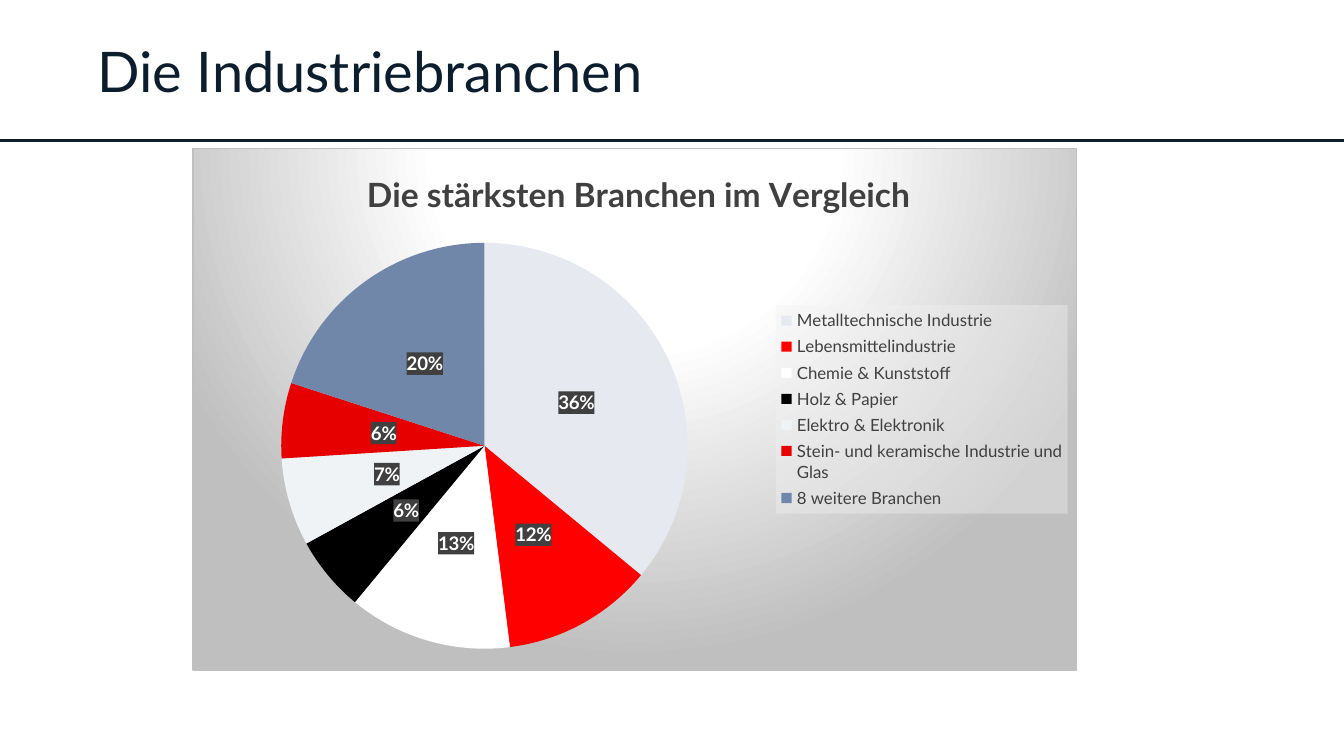
from dataclasses import dataclass

from lxml import etree
from pptx import Presentation
from pptx.chart.data import CategoryChartData
from pptx.dml.color import RGBColor
from pptx.enum.chart import XL_CHART_TYPE, XL_LABEL_POSITION, XL_LEGEND_POSITION
from pptx.enum.shapes import MSO_CONNECTOR
from pptx.enum.text import MSO_ANCHOR, PP_ALIGN
from pptx.oxml import parse_xml
from pptx.oxml.ns import nsdecls, qn
from pptx.util import Pt

PIE = XL_CHART_TYPE.PIE
CENTER = XL_LABEL_POSITION.CENTER
RIGHT = XL_LEGEND_POSITION.RIGHT
STRAIGHT = MSO_CONNECTOR.STRAIGHT
BOTTOM = MSO_ANCHOR.BOTTOM
LEFT = PP_ALIGN.LEFT

HEAD = "Die Industriebranchen"
NAME = "Die stärksten Branchen im Vergleich"
PARTS = [
    ("Metalltechnische Industrie", 36, "E6EAF0"),
    ("Lebensmittelindustrie", 12, "FF0000"),
    ("Chemie & Kunststoff", 13, "FFFFFF"),
    ("Holz & Papier", 6, "000000"),
    ("Elektro & Elektronik", 7, "F0F3F6"),
    ("Stein- und keramische Industrie und Glas", 6, "E70000"),
    ("8 weitere Branchen", 20, "7187A9"),
]
WIDE, HIGH = 720, 405
RULE = 75.2


@dataclass(frozen=True)
class Theme:
    face: str = "Lato"
    navy: str = "0C1D2E"
    black: str = "000000"
    dark: str = "404040"
    white: str = "FFFFFF"
    pale: str = "F2F2F2"
    gray: str = "BFBFBF"
    head: float = 30
    name: float = 18
    label: float = 10
    key: float = 9


THEME = Theme()


def style(font, size, color, bold=False):
    font.name, font.size, font.bold = THEME.face, Pt(size), bold
    font.color.rgb = RGBColor.from_string(color)


def box(fill, line="<a:ln><a:noFill/></a:ln>"):
    return parse_xml(f'<c:spPr {nsdecls("c", "a")}>{fill}{line}</c:spPr>')


def solid(color, alpha=100):
    return (f'<a:solidFill><a:srgbClr val="{color}">'
            f'<a:alpha val="{alpha * 1000}"/></a:srgbClr></a:solidFill>')


def place(node, after, **spots):
    """Give a chart part a manual layout, as shares of the chart's size."""
    for old in node.findall(qn("c:layout")):
        node.remove(old)
    layout = etree.Element(qn("c:layout"))
    manual = etree.SubElement(layout, qn("c:manualLayout"))
    if "plotArea" in node.tag:
        etree.SubElement(manual, qn("c:layoutTarget")).set("val", "inner")
    for axis in "xy":
        etree.SubElement(manual, qn(f"c:{axis}Mode")).set("val", "edge")
    for key, value in spots.items():
        etree.SubElement(manual, qn(f"c:{key}")).set("val", str(value))
    if after is None:
        node.insert(0, layout)
    else:
        node.find(qn(after)).addnext(layout)


def add_head(slide):
    head = slide.shapes.title
    head.left, head.top, head.width, head.height = Pt(45), Pt(3.6), Pt(630), Pt(55.4)
    frame = head.text_frame
    frame.word_wrap, frame.vertical_anchor = True, BOTTOM
    para = frame.paragraphs[0]
    para.alignment, para.line_spacing = LEFT, 0.8
    run = para.add_run()
    run.text = HEAD
    style(run.font, THEME.head, THEME.navy)


def add_rule(slide):
    rule = slide.shapes.add_connector(
        STRAIGHT, Pt(WIDE), Pt(RULE), Pt(0), Pt(RULE))
    rule.line.color.rgb = RGBColor.from_string(THEME.navy)
    rule.line.width = Pt(1.5)
    etree.SubElement(rule._element.spPr, qn("a:effectLst"))


def add_pie(slide):
    data = CategoryChartData()
    data.categories = [part[0] for part in PARTS]
    data.add_series("Series 1", [part[1] for part in PARTS])
    chart = slide.shapes.add_chart(
        PIE, Pt(103), Pt(79.3), Pt(474), Pt(280), data).chart
    style(chart.font, THEME.label, THEME.black)

    stops = "".join(
        f'<a:gs pos="{pos * 1000}"><a:srgbClr val="{color}"/></a:gs>'
        for pos, color in [(0, THEME.white), (39, THEME.white), (100, THEME.gray)])
    fill = (f'<a:gradFill><a:gsLst>{stops}</a:gsLst><a:path path="circle">'
            '<a:fillToRect l="50000" t="-80000" r="50000" b="180000"/>'
            '</a:path></a:gradFill>')
    line = f'<a:ln w="9525">{solid(THEME.gray)}</a:ln>'
    root = chart._chartSpace
    root.find(qn("c:chart")).addnext(box(fill, line))

    chart.has_title = True
    run = chart.chart_title.text_frame.paragraphs[0].add_run()
    run.text = NAME
    style(run.font, THEME.name, THEME.dark, True)
    place(chart.chart_title._element, "c:tx", x=0.19, y=0.03)

    plot = chart.plots[0]
    plot.vary_by_categories = True
    for point, part in enumerate(PARTS):
        paint = plot.series[0].points[point].format
        paint.fill.solid()
        paint.fill.fore_color.rgb = RGBColor.from_string(part[2])
        paint.line.fill.background()
    place(root.find(".//" + qn("c:plotArea")), None, x=0.1, y=0.18, w=0.46, h=0.78)

    plot.has_data_labels = True
    labels = plot.data_labels
    labels.show_percentage, labels.show_value = True, False
    labels.number_format, labels.number_format_is_linked = "0%", False
    labels.position = CENTER
    style(labels.font, THEME.label, THEME.white, True)
    labels._element.find(qn("c:numFmt")).addnext(box(solid(THEME.dark)))

    chart.has_legend = True
    legend = chart.legend
    legend.position, legend.include_in_layout = RIGHT, False
    style(legend.font, THEME.key, THEME.dark)
    place(legend._element, "c:legendPos", x=0.66, y=0.3, w=0.33, h=0.4)
    legend._element.find(qn("c:overlay")).addnext(box(solid(THEME.pale, 39)))


def main():
    deck = Presentation()
    deck.slide_width, deck.slide_height = Pt(WIDE), Pt(HIGH)
    slide = deck.slides.add_slide(deck.slide_layouts[5])
    add_rule(slide)
    add_head(slide)
    add_pie(slide)
    deck.save("out.pptx")


if __name__ == "__main__":
    main()
